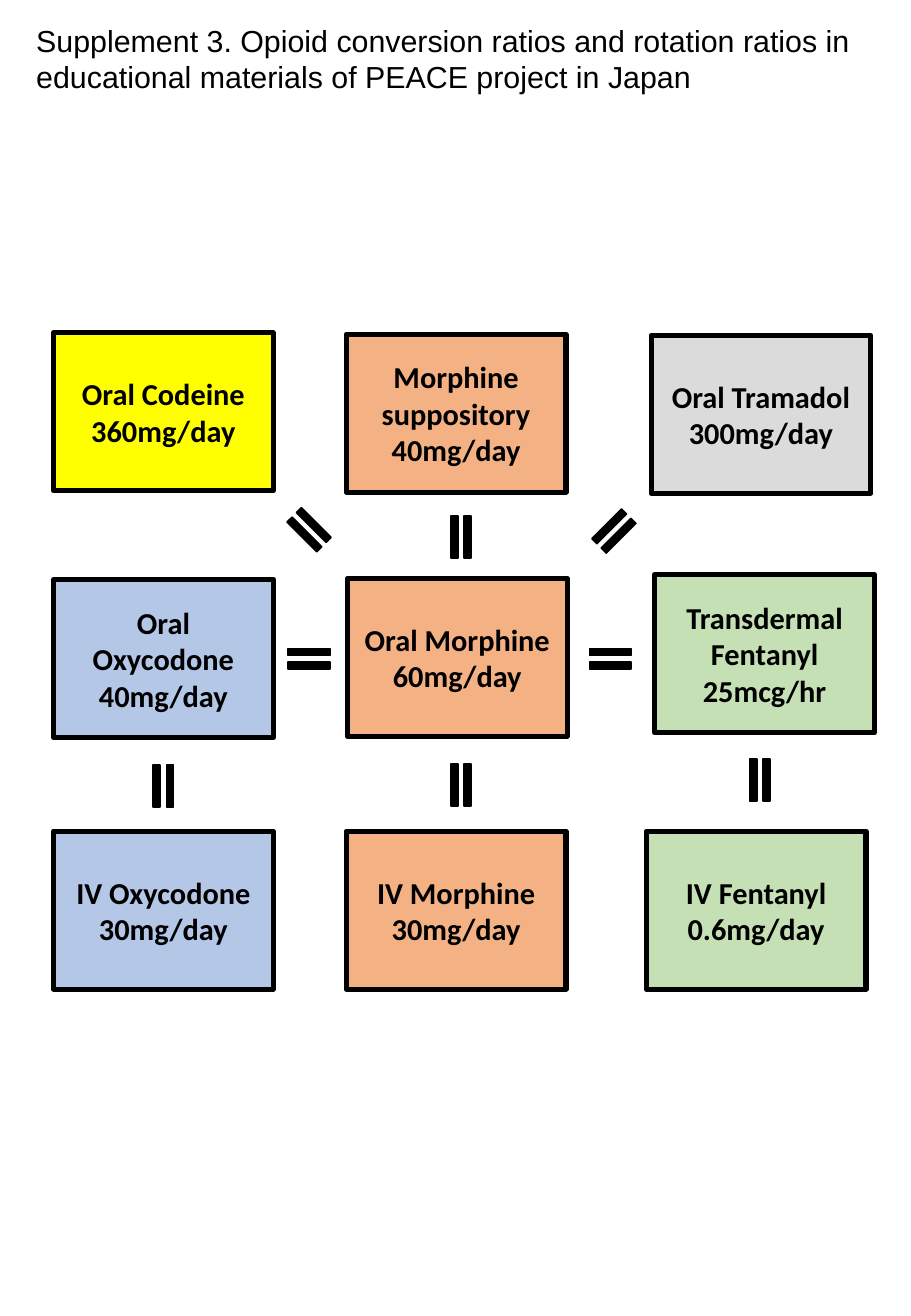
"""Build the opioid conversion ratio chart as a one-page slide."""
from pptx import Presentation
from pptx.dml.color import RGBColor
from pptx.enum.shapes import MSO_SHAPE
from pptx.enum.text import MSO_ANCHOR, MSO_AUTO_SIZE, PP_ALIGN
from pptx.util import Inches, Pt

RECT, EQUAL = MSO_SHAPE.RECTANGLE, MSO_SHAPE.MATH_EQUAL
MIDDLE, TOP = MSO_ANCHOR.MIDDLE, MSO_ANCHOR.TOP
CENTER, LEFT = PP_ALIGN.CENTER, PP_ALIGN.LEFT
GROW = MSO_AUTO_SIZE.SHAPE_TO_FIT_TEXT

COLORS = {
    "black": "000000",
    "codeine": "FFFF00",
    "morphine": "F4B183",
    "tramadol": "DBDBDB",
    "oxycodone": "B4C7E7",
    "fentanyl": "C5E0B4",
}
TITLE = ("Supplement 3. Opioid conversion ratios and rotation ratios in "
         "educational materials of PEACE project in Japan")
DRUGS = [
    ("Oral Codeine", "360mg/day", "codeine", 0.44, 2.74),
    ("Morphine suppository", "40mg/day", "morphine", 2.85, 2.75),
    ("Oral Tramadol", "300mg/day", "tramadol", 5.36, 2.76),
    ("Oral Oxycodone", "40mg/day", "oxycodone", 0.44, 4.77),
    ("Oral Morphine", "60mg/day", "morphine", 2.86, 4.76),
    ("Transdermal Fentanyl", "25mcg/hr", "fentanyl", 5.39, 4.73),
    ("IV Oxycodone", "30mg/day", "oxycodone", 0.44, 6.84),
    ("IV Morphine", "30mg/day", "morphine", 2.85, 6.84),
    ("IV Fentanyl", "0.6mg/day", "fentanyl", 5.32, 6.84),
]
EQUAL_SIGNS = [
    (2.31, 4.14, 45), (3.56, 4.2, 90), (4.82, 4.15, 315),
    (2.31, 5.2, 0), (4.79, 5.2, 0),
    (1.11, 6.25, 90), (3.56, 6.24, 90), (6.02, 6.2, 90),
]
BOX_SIZE = (1.81, 1.3)
SIGN_SIZE = (0.47, 0.44)
SIGN_ADJUSTMENTS = (0.131, 0.118)


def color(name):
    return RGBColor.from_string(COLORS[name])


def write(shape, lines, font="Calibri", size=18, bold=False, align=LEFT, anchor=TOP):
    tf = shape.text_frame
    tf.word_wrap = True
    tf.auto_size = GROW
    tf.vertical_anchor = anchor
    for i, line in enumerate(lines):
        p = tf.paragraphs[0] if i == 0 else tf.add_paragraph()
        p.alignment = align
        r = p.add_run()
        r.text = line
        r.font.name = font
        r.font.size = Pt(size)
        r.font.bold = bold
        r.font.color.rgb = color("black")


def add_filled(slide, kind, left, top, size, fill, line_width):
    sp = slide.shapes.add_shape(kind, *map(Inches, (left, top, *size)))
    sp.shadow.inherit = False
    sp.fill.solid()
    sp.fill.fore_color.rgb = color(fill)
    sp.line.color.rgb = color("black")
    sp.line.width = Pt(line_width)
    return sp


def main():
    prs = Presentation()
    prs.slide_width, prs.slide_height = Inches(7.5), Inches(10.83)
    s = prs.slides.add_slide(prs.slide_layouts[6])

    title = s.shapes.add_textbox(*map(Inches, (0.2, 0.13, 7.04, 0.71)))
    write(title, [TITLE], font="Arial")

    for drug, dose, fill, left, top in DRUGS:
        box = add_filled(s, RECT, left, top, BOX_SIZE, fill, 3)
        write(box, [drug, dose], bold=True, align=CENTER, anchor=MIDDLE)

    for left, top, angle in EQUAL_SIGNS:
        sign = add_filled(s, EQUAL, left, top, SIGN_SIZE, "black", 1)
        sign.rotation = angle
        for i, value in enumerate(SIGN_ADJUSTMENTS):
            sign.adjustments[i] = value

    prs.save("out.pptx")


if __name__ == "__main__":
    main()
